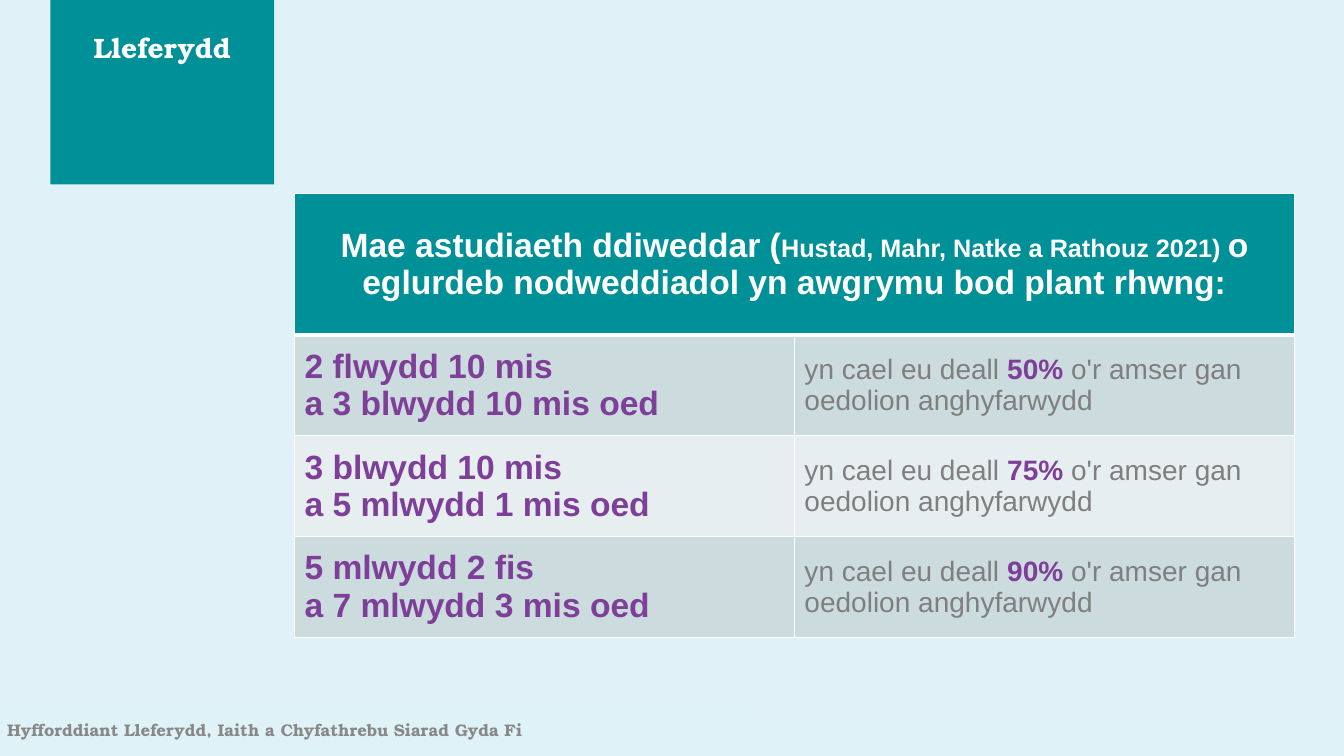
"""Builds the speech intelligibility slide with its table of age ranges."""
from dataclasses import dataclass

from lxml.etree import SubElement
from pptx import Presentation
from pptx.dml.color import RGBColor
from pptx.enum.shapes import MSO_SHAPE as Shape
from pptx.enum.text import MSO_ANCHOR as Anchor, MSO_AUTO_SIZE as AutoSize, PP_ALIGN as Align
from pptx.oxml.ns import qn
from pptx.util import Cm, Pt


@dataclass(frozen=True)
class Theme:
    background: str = "E0F2F8"
    wedge: str = "DFF2F7"
    teal: str = "009098"
    purple: str = "7E3F99"
    grey: str = "7F7F7F"
    footer_grey: str = "888888"
    white: str = "FFFFFF"
    bands: tuple = ("CCDBDD", "E7EEEF")
    heading_font: str = "TeX Gyre Bonum"
    body_font: str = "Arial"
    large: int = 24
    medium: int = 20
    small: int = 18
    footer: int = 12


theme = Theme()


def add_span(para, text, size, color, bold=True, font=theme.body_font):
    span = para.add_run()
    span.text = text
    span.font.name = font
    span.font.size = Pt(size)
    span.font.bold = bold
    span.font.color.rgb = RGBColor.from_string(color)


def style_cell(cell, fill, top=1, bottom=1):
    cell.vertical_anchor = Anchor.MIDDLE
    properties = cell._tc.get_or_add_tcPr()
    for side, width in (("L", 1), ("R", 1), ("T", top), ("B", bottom)):
        line = SubElement(properties, qn(f"a:ln{side}"), w=str(Pt(width)))
        solid = SubElement(line, qn("a:solidFill"))
        SubElement(solid, qn("a:srgbClr"), val=theme.white)
    cell.fill.solid()
    cell.fill.fore_color.rgb = RGBColor.from_string(fill)


deck = Presentation()
deck.slide_width, deck.slide_height = Cm(33.87), Cm(19.05)
page = deck.slides.add_slide(deck.slide_layouts[5])
page.background.fill.solid()
page.background.fill.fore_color.rgb = RGBColor.from_string(theme.background)

outline = page.shapes.build_freeform(Cm(0), Cm(17.78))
outline.add_line_segments(
    [(Cm(0), Cm(19.05)), (Cm(33.87), Cm(19.05)), (Cm(33.87), Cm(18.39))], close=True)
wedge = outline.convert_to_shape()
tab = page.shapes.add_shape(Shape.RECTANGLE, Cm(1.27), Cm(0), Cm(5.64), Cm(4.65))
title = page.shapes.title
for shape, color in ((wedge, theme.wedge), (tab, theme.teal)):
    shape.shadow.inherit = False
    shape.fill.solid()
    shape.fill.fore_color.rgb = RGBColor.from_string(color)
    shape.line.fill.background()
    title.element.addprevious(shape.element)

title.left, title.top, title.width, title.height = Cm(1.27), Cm(0.76), Cm(5.64), Cm(3.89)
footer = page.shapes.add_textbox(Cm(0.18), Cm(18.14), Cm(21.74), Cm(0.5))
labels = (
    (title, "Lleferydd", theme.medium, theme.white, Align.CENTER),
    (footer, "Hyfforddiant Lleferydd, Iaith a Chyfathrebu Siarad Gyda Fi",
     theme.footer, theme.footer_grey, Align.LEFT),
)
for box, text, size, color, align in labels:
    frame = box.text_frame
    frame.word_wrap = True
    frame.auto_size = AutoSize.NONE
    frame.vertical_anchor = Anchor.TOP
    frame.margin_left = frame.margin_top = frame.margin_right = frame.margin_bottom = 0
    para = frame.paragraphs[0]
    para.alignment = align
    add_span(para, text, size, color, font=theme.heading_font)

ages = (
    ("2 flwydd 10 mis", "a 3 blwydd 10 mis oed", "50% "),
    ("3 blwydd 10 mis", "a 5 mlwydd 1 mis oed", "75% "),
    ("5 mlwydd 2 fis", "a 7 mlwydd 3 mis oed", "90% "),
)
table = page.shapes.add_table(
    len(ages) + 1, 2, Cm(7.42), Cm(4.88), Cm(25.2), Cm(11.18)).table
for column in table.columns:
    column.width = Cm(12.6)
for index, row in enumerate(table.rows):
    row.height = Cm(2.54) if index else Cm(3.56)

header = table.cell(0, 0)
header.merge(table.cell(0, 1))
for cell in table.rows[0].cells:
    style_cell(cell, theme.teal, bottom=3)
para = header.text_frame.paragraphs[0]
para.alignment = Align.CENTER
for text, size in (
    ("Mae astudiaeth ddiweddar (", theme.large),
    ("Hustad, Mahr, Natke a Rathouz 2021) ", theme.small),
    ("o eglurdeb nodweddiadol yn awgrymu bod plant rhwng:", theme.large),
):
    add_span(para, text, size, theme.white)

for index, (start, end, share) in enumerate(ages):
    age_cell, share_cell = table.rows[index + 1].cells
    for cell in (age_cell, share_cell):
        style_cell(cell, theme.bands[index % 2], top=1 if index else 3)
    frame = age_cell.text_frame
    add_span(frame.paragraphs[0], start, theme.large, theme.purple)
    add_span(frame.add_paragraph(), end, theme.large, theme.purple)
    para = share_cell.text_frame.paragraphs[0]
    add_span(para, "yn cael eu deall ", theme.medium, theme.grey, bold=False)
    add_span(para, share, theme.medium, theme.purple)
    add_span(para, "o'r amser gan oedolion anghyfarwydd", theme.medium, theme.grey, bold=False)

deck.save("out.pptx")
